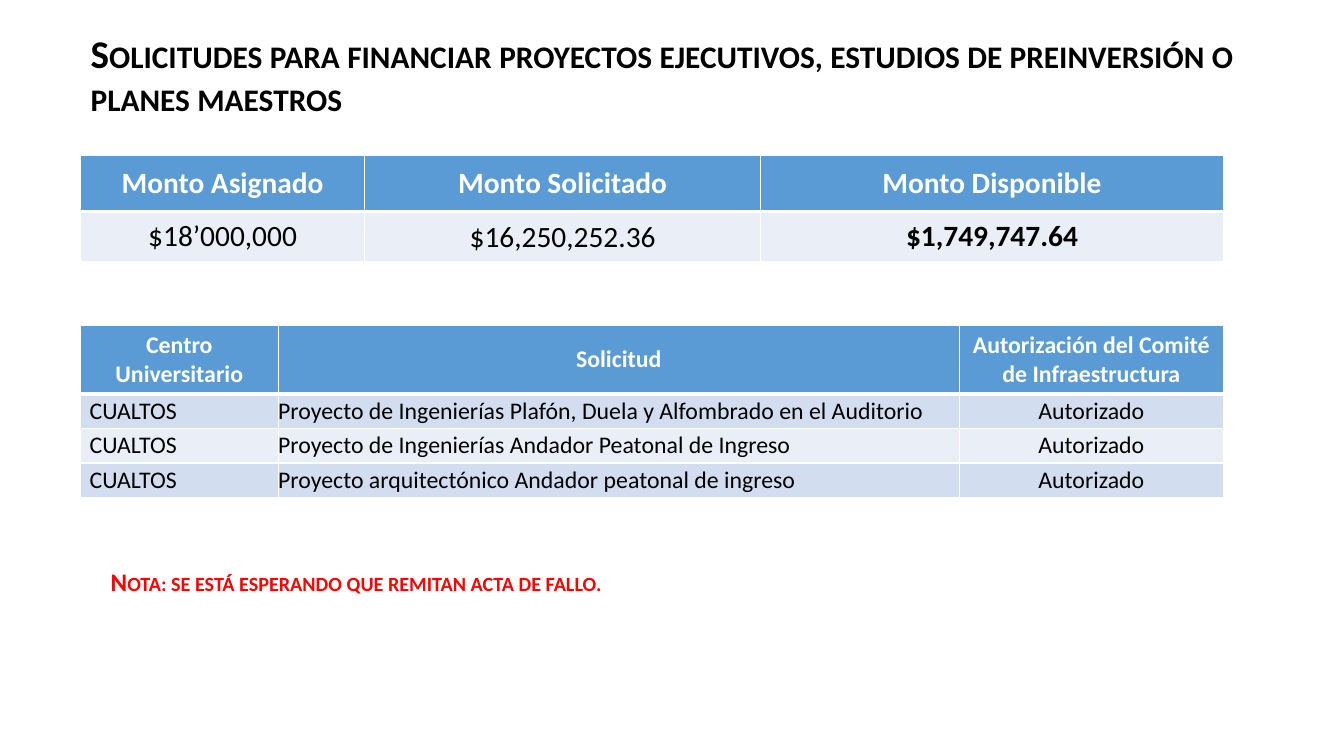
from dataclasses import dataclass

from lxml.etree import SubElement
from pptx import Presentation
from pptx.dml.color import RGBColor
from pptx.enum.text import MSO_ANCHOR, MSO_AUTO_SIZE, PP_ALIGN
from pptx.oxml.ns import qn
from pptx.util import Cm, Pt

WHITE, BLACK, RED = "FFFFFF", "000000", "FF0000"
HEADER_BLUE, BAND_DARK, BAND_LIGHT = "5B9BD5", "D2DEEF", "EAEFF7"
LEFT_EDGE = 2.03
CELL_SIDES = ("left", "top", "right", "bottom")


@dataclass(frozen=True)
class CellLook:
    """Alignment and left, top, right and bottom margins of a cell, in cm."""

    align: PP_ALIGN = PP_ALIGN.CENTER
    margins: tuple[float, float, float, float] = (0.25, 0.13, 0.25, 0.13)
    bold: bool = False


@dataclass(frozen=True)
class TableBlock:
    """A table with one header row, lengths in cm."""

    top: float
    widths: tuple[float, ...]
    header_height: float
    row_height: float
    size: int
    header: tuple[str, ...]
    rows: list[tuple[str, ...]]
    bands: tuple[str, ...]
    header_look: CellLook
    looks: tuple[CellLook, ...]


PADDED = CellLook(margins=(0.18,) * 4)
FLUSH = (0, 0, 0, 0)

AMOUNTS = TableBlock(
    top=3.91, widths=(7.16, 9.98, 11.66), header_height=1.42, row_height=1.24, size=21,
    header=("Monto Asignado", "Monto Solicitado", "Monto Disponible"),
    rows=[("$18’000,000", "$16,250,252.36", "$1,749,747.64")],
    bands=(BAND_LIGHT,),
    header_look=PADDED,
    looks=(PADDED, CellLook(margins=(0.03, 0.03, 0.03, 0)),
           CellLook(margins=(0.18,) * 4, bold=True)),
)
REQUESTS = TableBlock(
    top=8.2, widths=(4.98, 17.17, 6.65), header_height=1.6, row_height=0.87, size=17,
    header=("Centro Universitario", "Solicitud", "Autorización del Comité de Infraestructura"),
    rows=[("CUALTOS", project, "Autorizado") for project in (
        "Proyecto de Ingenierías Plafón, Duela y Alfombrado en el Auditorio",
        "Proyecto de Ingenierías Andador Peatonal de Ingreso",
        "Proyecto arquitectónico Andador peatonal de ingreso",
    )],
    bands=(BAND_DARK, BAND_LIGHT),
    header_look=CellLook(),
    looks=(CellLook(PP_ALIGN.LEFT, (0.23, 0, 0, 0)), CellLook(PP_ALIGN.LEFT, FLUSH),
           CellLook(margins=FLUSH)),
)


def apply(target, values: dict) -> None:
    """Set every attribute named in values."""
    for name, value in values.items():
        setattr(target, name, value)


def paint(color_format, color: str) -> None:
    """Give a colour format a hex colour."""
    color_format.rgb = RGBColor.from_string(color)


def write(paragraph, text: str, size: int, color: str, bold: bool, small_caps: bool = False) -> None:
    """Write one formatted run into a paragraph."""
    run = paragraph.add_run()
    run.text = text
    apply(run.font, {"name": "Calibri", "size": Pt(size), "bold": bold})
    paint(run.font.color, color)
    if small_caps:
        run.font._element.set("cap", "small")


def add_borders(cell, top: int, bottom: int) -> None:
    """Draw white borders, with the top and bottom widths in points."""
    properties = cell._tc.get_or_add_tcPr()
    for index, (tag, width) in enumerate((("lnL", 1), ("lnR", 1), ("lnT", top), ("lnB", bottom))):
        line = SubElement(properties, qn(f"a:{tag}"), w=str(Pt(width)))
        SubElement(SubElement(line, qn("a:solidFill")), qn("a:srgbClr"), val=WHITE)
        properties.insert(index, line)


def add_block(slide, block: TableBlock) -> None:
    """Draw a table block on the slide."""
    records = [block.header, *block.rows]
    heights = [block.header_height] + [block.row_height] * len(block.rows)
    table = slide.shapes.add_table(
        len(records), len(block.widths), Cm(LEFT_EDGE), Cm(block.top),
        Cm(sum(block.widths)), Cm(sum(heights)),
    ).table
    table.horz_banding = False
    for column, width in zip(table.columns, block.widths):
        column.width = Cm(width)
    for row_index, (row, height, record) in enumerate(zip(table.rows, heights, records)):
        row.height = Cm(height)
        is_header = row_index == 0
        band = HEADER_BLUE if is_header else block.bands[(row_index - 1) % len(block.bands)]
        for cell, text, body_look in zip(row.cells, record, block.looks):
            look = block.header_look if is_header else body_look
            margins = {f"margin_{side}": Cm(gap) for side, gap in zip(CELL_SIDES, look.margins)}
            apply(cell, {"vertical_anchor": MSO_ANCHOR.MIDDLE, **margins})
            cell.fill.solid()
            paint(cell.fill.fore_color, band)
            add_borders(cell, 3 if row_index == 1 else 1, 3 if is_header else 1)
            paragraph = cell.text_frame.paragraphs[0]
            paragraph.alignment = look.align
            write(paragraph, text, block.size, WHITE if is_header else BLACK, is_header or look.bold)


def add_title(slide) -> None:
    """Place and fill the slide title."""
    title = slide.shapes.title
    apply(title, {"left": Cm(LEFT_EDGE), "top": Cm(0.36), "width": Cm(30.48), "height": Cm(3.18)})
    apply(title.text_frame, {"vertical_anchor": MSO_ANCHOR.MIDDLE, "word_wrap": True,
                             "auto_size": MSO_AUTO_SIZE.NONE})
    paragraph = title.text_frame.paragraphs[0]
    apply(paragraph, {"alignment": PP_ALIGN.LEFT, "line_spacing": 0.9})
    write(paragraph, "Solicitudes para financiar proyectos ejecutivos, estudios de preinversión "
          "o planes maestros", 28, BLACK, True, small_caps=True)


def add_note(slide) -> None:
    """Add the red note under the tables."""
    note = slide.shapes.add_textbox(Cm(2.54), Cm(14.15), Cm(20.04), Cm(1.02)).text_frame
    apply(note, {"word_wrap": True, "auto_size": MSO_AUTO_SIZE.SHAPE_TO_FIT_TEXT})
    write(note.paragraphs[0], "Nota: se está esperando que remitan acta de fallo.",
          18, RED, True, small_caps=True)


def main() -> None:
    """Build and save the slide."""
    deck = Presentation()
    apply(deck, {"slide_width": Cm(33.87), "slide_height": Cm(19.05)})
    slide = deck.slides.add_slide(deck.slide_layouts.get_by_name("Title Only"))
    add_title(slide)
    for block in (REQUESTS, AMOUNTS):
        add_block(slide, block)
    add_note(slide)
    deck.save("out.pptx")


if __name__ == "__main__":
    main()
